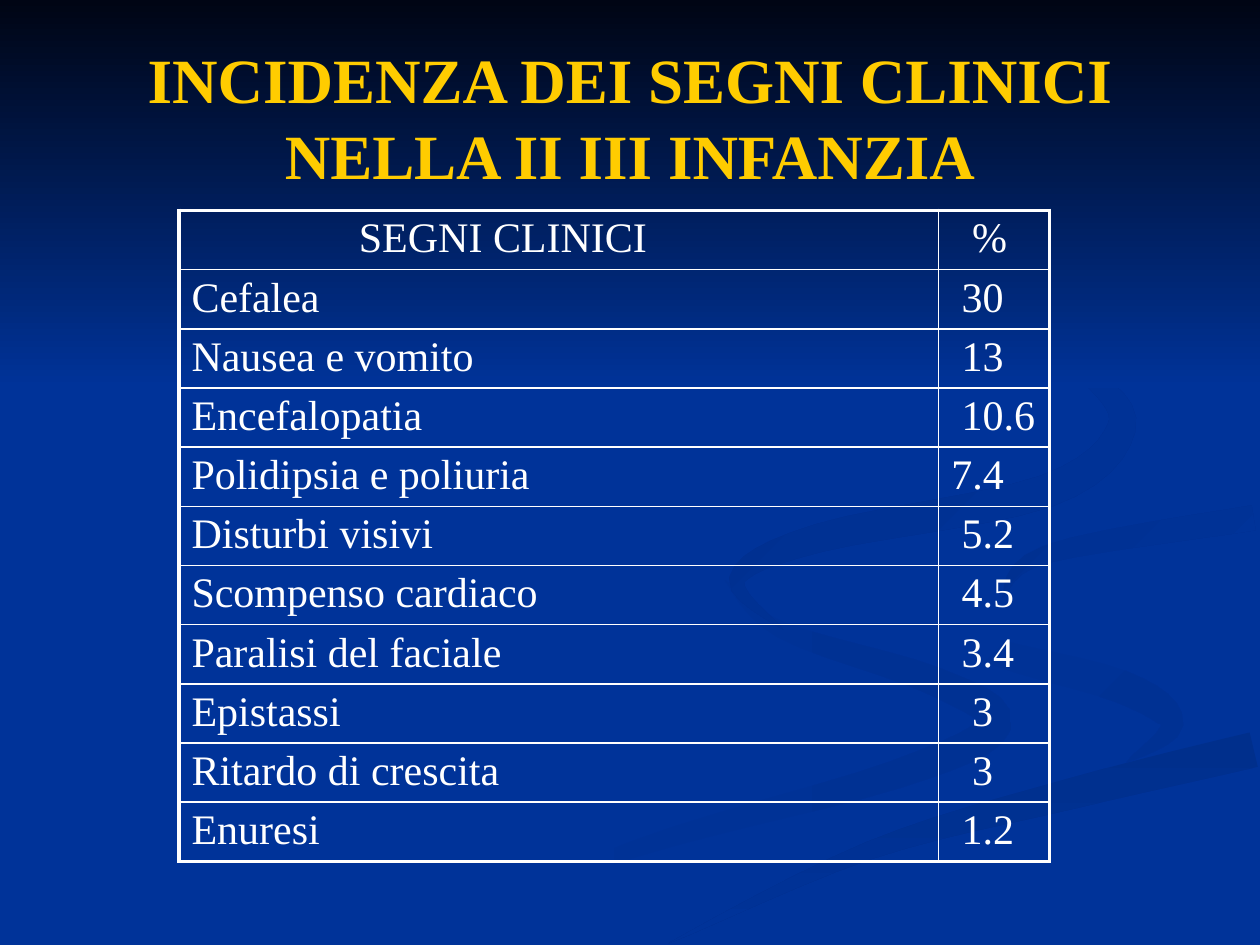
import math
from dataclasses import dataclass

import pptx
import pptx.dml.color
import pptx.enum.shapes
import pptx.enum.text
import pptx.oxml
import pptx.oxml.ns
import pptx.util
from pptx.util import Inches

FONT = "Times New Roman"
BLUE = "003399"
WHITE = "FFFFFF"
GOLD = "FFCC00"
SPACE = 0.083
STEPS = 6


@dataclass
class Wave:
    start: str
    end: str
    angle: int
    half: float
    points: list[tuple[float, float]]
    reach: float = 1


@dataclass
class Row:
    label: str
    value: str
    inset: int = 1
    shift: int = 0


WAVES = [
    Wave(BLUE, "003193", 0, 0.13, [
        (5.75, 4.6), (6.2, 5), (7.4, 5.4), (7.9, 5.75), (7.1, 6.15), (5, 6.75), (3.3, 7.49)]),
    Wave(BLUE, "003193", 45, 0.13, [
        (7.24, 4.64), (7.7, 5.1), (8.9, 5.45), (9.3, 5.75), (8.94, 6.05)]),
    Wave("002F8C", BLUE, 90, 0.14, [
        (5.3, 7.49), (6.9, 6.75), (8.5, 6.3), (9.95, 5.95)], 0.5),
    Wave("003091", BLUE, 45, 0.1, [(7.95, 4.75), (8.3, 4.4), (9.95, 4.11)], 0.5),
    Wave("002F8E", BLUE, 45, 0.13, [
        (7.62, 2.33), (8.6, 2.95), (8.9, 3.4), (8.3, 3.9), (6.5, 4.27), (5.85, 4.6), (6.22, 5)]),
]

ROWS = [
    Row("SEGNI CLINICI", "%", 2, 16),
    Row("Cefalea", "30"),
    Row("Nausea e vomito", "13"),
    Row("Encefalopatia", "10.6"),
    Row("Polidipsia e poliuria", "7.4", 0),
    Row("Disturbi visivi", "5.2"),
    Row("Scompenso cardiaco", "4.5"),
    Row("Paralisi del faciale", "3.4"),
    Row("Epistassi", "3", 2),
    Row("Ritardo di crescita", "3", 2),
    Row("Enuresi", "1.2"),
]


def tint(code: str):
    return pptx.dml.color.RGBColor.from_string(code)


def write(frame, text: str, *, size: int, color: str, bold=False, align="LEFT"):
    para = frame.paragraphs[0]
    para.alignment = getattr(pptx.enum.text.PP_ALIGN, align)
    run = para.add_run()
    run.text = text
    run.font.name = FONT
    run.font.size = pptx.util.Pt(size)
    run.font.bold = bold
    run.font.color.rgb = tint(color)


def shade(shape, start: str, end: str, angle: int):
    shape.shadow.inherit = False
    shape.line.fill.background()
    shape.fill.gradient()
    shape.fill.gradient_angle = 360 - angle
    for stop, code, place in zip(shape.fill.gradient_stops, (start, end), (0, 1)):
        stop.color.rgb = tint(code)
        stop.position = place


def curve(points: list[tuple[float, float]]) -> list[tuple[float, float]]:
    knots = [points[0], *points, points[-1]]
    line = []
    for a, b, c, d in zip(knots, knots[1:], knots[2:], knots[3:]):
        for step in range(STEPS):
            t = step / STEPS
            line.append(tuple(
                q + t / 2 * (r - p + t * (2 * p - 5 * q + 4 * r - s + t * (3 * (q - r) + s - p)))
                for p, q, r, s in zip(a, b, c, d)))
    return line + [points[-1]]


def draw_wave(shapes, wave: Wave):
    line = curve(wave.points)
    last = len(line) - 1
    upper, lower = [], []
    for spot, (x, y) in enumerate(line):
        ahead, behind = line[min(spot + 1, last)], line[max(spot - 1, 0)]
        dx, dy = ahead[0] - behind[0], ahead[1] - behind[1]
        size = wave.half * math.sin(math.pi * wave.reach * spot / last) / math.hypot(dx, dy)
        upper.append((x + dy * size, y - dx * size))
        lower.append((x - dy * size, y + dx * size))
    first, *rest = upper + lower[::-1]
    pen = shapes.build_freeform(*(Inches(n) for n in first))
    pen.add_line_segments([(Inches(x), Inches(y)) for x, y in rest], close=True)
    shade(pen.convert_to_shape(), wave.start, wave.end, wave.angle)


def edge(cell, sides: dict[str, float]):
    props = cell._tc.get_or_add_tcPr()
    for spot, (side, width) in enumerate(sides.items()):
        line = pptx.oxml.parse_xml(
            f'<a:ln{side} {pptx.oxml.ns.nsdecls("a")} w="{pptx.util.Pt(width)}">'
            f'<a:solidFill><a:srgbClr val="{WHITE}"/></a:solidFill></a:ln{side}>')
        props.insert(spot, line)


def draw_table(shapes, rows: list[Row]):
    high = 0.47
    table = shapes.add_table(len(rows), 2, Inches(1.42), Inches(1.67),
                             Inches(6.91), Inches(high * len(rows))).table
    table.first_row = table.horz_banding = False
    for column, width in zip(table.columns, (6.03, 0.88)):
        column.width = Inches(width)
    for r, row in enumerate(rows):
        table.rows[r].height = Inches(high)
        for c, (text, gap) in enumerate([(row.label, row.shift), (row.value, row.inset)]):
            cell = table.cell(r, c)
            cell.fill.background()
            cell.margin_left = Inches(0.1 + gap * SPACE)
            cell.margin_right = Inches(0.05)
            cell.margin_top = cell.margin_bottom = Inches(0.04)
            write(cell.text_frame, text, size=24, color=WHITE)
            outer = {"L": c == 0, "R": c == 1, "T": r == 0, "B": r == len(rows) - 1}
            edge(cell, {side: 2.25 if rim else 1 for side, rim in outer.items()})


def main():
    deck = pptx.Presentation()
    deck.slide_width, deck.slide_height = Inches(10), Inches(7.5)
    slide = deck.slides.add_slide(deck.slide_layouts[5])
    slide.background.fill.solid()
    slide.background.fill.fore_color.rgb = tint(BLUE)
    shapes = slide.shapes
    title = shapes.title
    for wave in WAVES:
        draw_wave(shapes, wave)
    sky = shapes.add_shape(pptx.enum.shapes.MSO_SHAPE.RECTANGLE, 0, 0, Inches(10), Inches(3.08))
    shade(sky, "000514", BLUE, 90)
    shapes.element.append(title.element)
    title.left, title.top = Inches(0.5), Inches(0.3)
    title.width, title.height = Inches(9), Inches(1.25)
    title.text_frame.word_wrap = True
    title.text_frame.auto_size = pptx.enum.text.MSO_AUTO_SIZE.NONE
    title.text_frame.vertical_anchor = pptx.enum.text.MSO_ANCHOR.MIDDLE
    write(title.text_frame, "INCIDENZA DEI SEGNI CLINICI NELLA II III INFANZIA",
          size=36, color=GOLD, bold=True, align="CENTER")
    draw_table(shapes, ROWS)
    deck.save("out.pptx")


if __name__ == "__main__":
    main()
